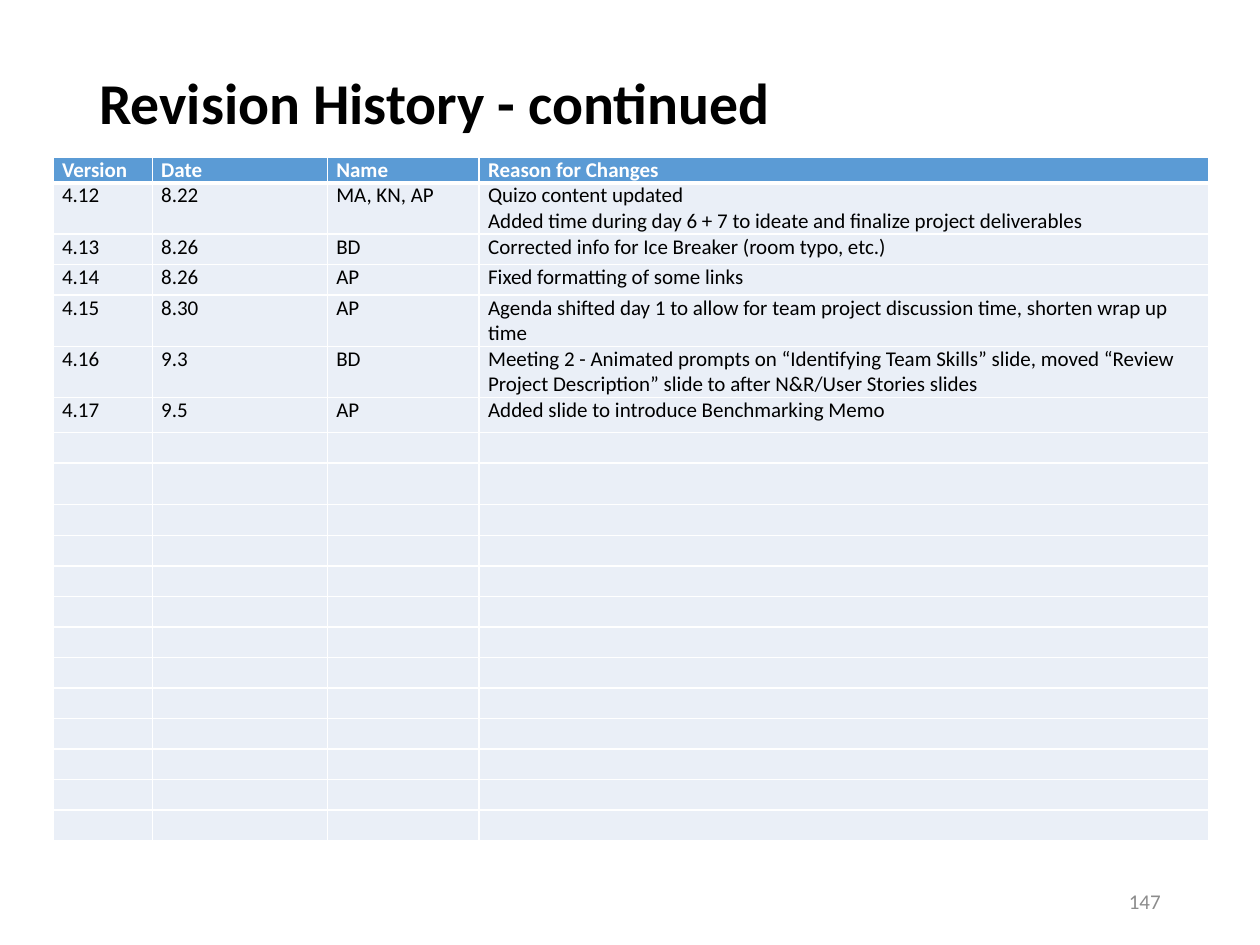
"""Build the revision history slide with its version table."""
import pptx
import pptx.dml.color
import pptx.enum.text
import pptx.oxml.ns
import pptx.util
from lxml import etree

Cm, Pt = pptx.util.Cm, pptx.util.Pt
RGBColor = pptx.dml.color.RGBColor
ALIGN, ANCHOR = pptx.enum.text.PP_ALIGN, pptx.enum.text.MSO_ANCHOR
qn = pptx.oxml.ns.qn

BLACK = RGBColor(0x00, 0x00, 0x00)
WHITE = RGBColor(0xFF, 0xFF, 0xFF)
GRAY = RGBColor(0x8C, 0x8C, 0x8C)
BLUE = RGBColor(0x5B, 0x9B, 0xD5)
PALE = RGBColor(0xEA, 0xEF, 0xF7)

TITLE = "Revision History - continued"
PAGE = "147"
HEADER = ("Version", "Date", "Name", "Reason for Changes")
REVISIONS = [
    ("4.12", "8.22", "MA, KN, AP", "Quizo content updated\n"
     "Added time during day 6 + 7 to ideate and finalize project deliverables"),
    ("4.13", "8.26", "BD", "Corrected info for Ice Breaker (room typo, etc.)"),
    ("4.14", "8.26", "AP", "Fixed formatting of some links"),
    ("4.15", "8.30", "AP", "Agenda shifted day 1 to allow for team project "
     "discussion time, shorten wrap up time"),
    ("4.16", "9.3", "BD", "Meeting 2 - Animated prompts on “Identifying Team Skills” slide, "
     "moved “Review Project Description” slide to after N&R/User Stories slides"),
    ("4.17", "9.5", "AP", "Added slide to introduce Benchmarking Memo"),
]
EMPTY_ROWS = 13
COL_WIDTHS = (2, 3.53, 3.06, 14.71)
ROW_HEIGHT = 0.615
SPECIAL_HEIGHTS = {0: 0.52, 1: 1.03, 4: 1.03, 5: 1.03, 6: 0.71, 8: 0.84}

TITLE_FONT = {"name": "Calibri", "size": Pt(33), "bold": True}
HEAD_FONT = {"name": "Calibri", "size": Pt(12), "bold": True}
BODY_FONT = {"name": "Calibri", "size": Pt(12), "bold": False}
CELL_FORMAT = {"margin_left": Cm(0.18), "margin_right": Cm(0.18),
               "margin_top": 0, "margin_bottom": 0}


def apply(obj, values):
    for name, value in values.items():
        setattr(obj, name, value)


def write(tf, text, font, color, align=ALIGN.LEFT):
    tf.text = text
    for p in tf.paragraphs:
        p.alignment = align
        for r in p.runs:
            apply(r.font, font)
            r.font.color.rgb = color
        if not p.runs:
            end = etree.SubElement(p._p, qn("a:endParaRPr"))
            end.set("sz", str(int(font["size"].pt * 100)))


def add_text(s, box, text, font, color, align=ALIGN.LEFT):
    tf = s.shapes.add_textbox(*map(Cm, box)).text_frame
    apply(tf, {"word_wrap": True, "vertical_anchor": ANCHOR.MIDDLE})
    write(tf, text, font, color, align)
    return tf


def add_borders(cell, bottom):
    tc_pr = cell._tc.get_or_add_tcPr()
    for side, width in (("L", 1), ("R", 1), ("T", 1), ("B", bottom)):
        ln = etree.SubElement(tc_pr, qn("a:ln" + side), w=str(Pt(width)))
        fill = etree.SubElement(ln, qn("a:solidFill"))
        etree.SubElement(fill, qn("a:srgbClr"), val=str(WHITE))


def add_revisions(s):
    rows = [HEADER] + REVISIONS + [("",) * len(HEADER)] * EMPTY_ROWS
    heights = [SPECIAL_HEIGHTS.get(i, ROW_HEIGHT) for i in range(len(rows))]
    table = s.shapes.add_table(len(rows), len(HEADER), Cm(1.07), Cm(3.17),
                               Cm(sum(COL_WIDTHS)), Cm(sum(heights))).table
    for col, width in zip(table.columns, COL_WIDTHS):
        col.width = Cm(width)
    for i, (row, values) in enumerate(zip(table.rows, rows)):
        row.height = Cm(heights[i])
        font, color, fill, bottom = ((BODY_FONT, BLACK, PALE, 1) if i
                                     else (HEAD_FONT, WHITE, BLUE, 3))
        for cell, text in zip(row.cells, values):
            apply(cell, CELL_FORMAT)
            add_borders(cell, bottom)
            cell.fill.solid()
            cell.fill.fore_color.rgb = fill
            write(cell.text_frame, text, font, color)


def main():
    prs = pptx.Presentation()
    apply(prs, {"slide_width": Cm(25.4), "slide_height": Cm(19.05)})
    s = prs.slides.add_slide(prs.slide_layouts[6])
    tf = add_text(s, (1.75, 1.02, 21.9, 3.68), TITLE, TITLE_FONT, BLACK)
    tf.margin_bottom = Cm(1.57)
    tf.paragraphs[0].line_spacing = 0.9
    add_revisions(s)
    add_text(s, (17.93, 17.65, 5.72, 1.02), PAGE, BODY_FONT, GRAY, ALIGN.RIGHT)
    prs.save("out.pptx")


if __name__ == "__main__":
    main()
